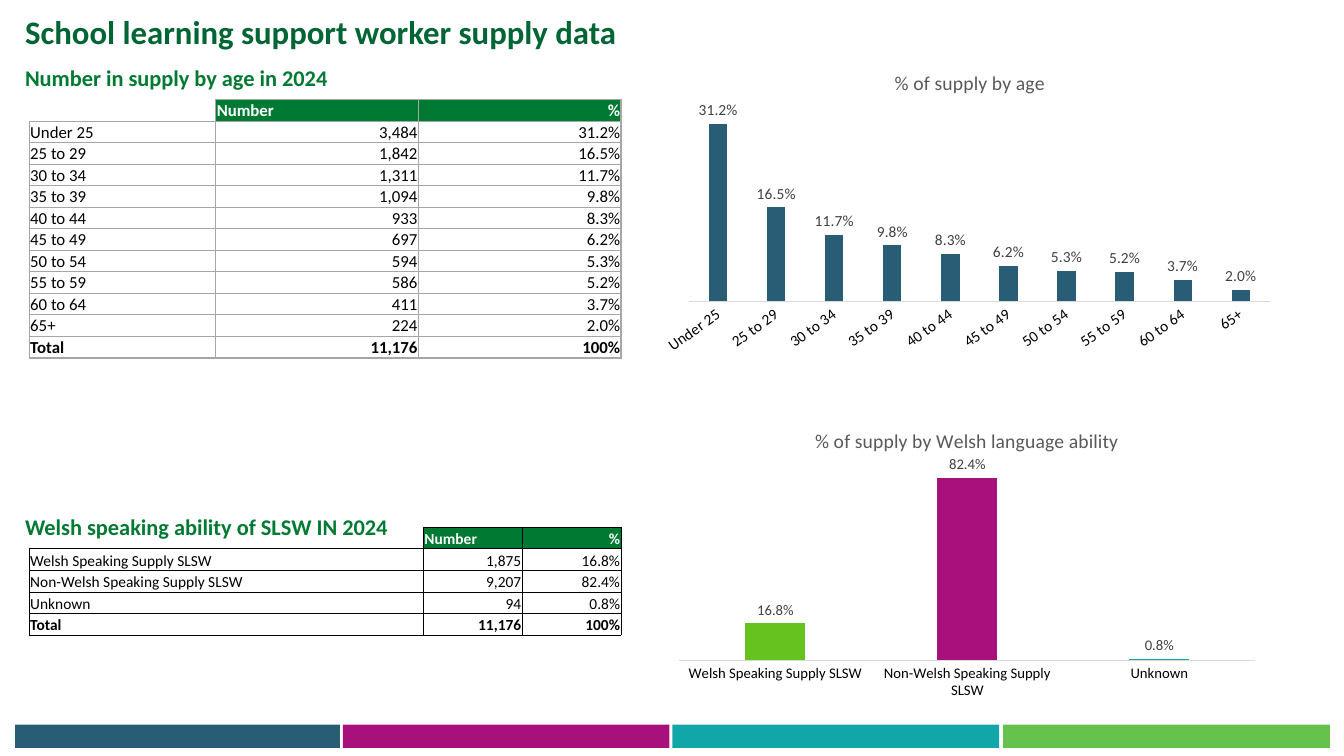
from lxml import etree
from pptx import Presentation
from pptx.chart.data import CategoryChartData
from pptx.dml.color import RGBColor
from pptx.enum import chart as ch, shapes, text
from pptx.oxml import parse_xml
from pptx.oxml.ns import nsdecls, qn
from pptx.util import Inches, Pt

FONT = "Calibri"
COLORS = {
    "title": "006534", "green": "007A33", "white": "FFFFFF", "black": "000000",
    "grey": "A6A6A6", "axis": "D9D9D9", "label": "404040", "heading": "595959",
    "navy": "295D75", "plum": "A8117C", "teal": "11A6A8", "leaf": "65C24C",
    "lime": "65C21F",
}
TITLE = "School learning support worker supply data"
HEADINGS = [
    ("Number in supply by age in 2024", (0.15, 0.59, 6.12, 0.37)),
    ("Welsh speaking ability of SLSW IN 2024", (0.15, 5.04, 3.92, 0.37)),
]
HEADER = ("", "Number", "%")
AGES = [
    ("Under 25", 3484, 31.2), ("25 to 29", 1842, 16.5), ("30 to 34", 1311, 11.7),
    ("35 to 39", 1094, 9.8), ("40 to 44", 933, 8.3), ("45 to 49", 697, 6.2),
    ("50 to 54", 594, 5.3), ("55 to 59", 586, 5.2), ("60 to 64", 411, 3.7),
    ("65+", 224, 2.0),
]
WELSH = [
    ("Welsh Speaking Supply SLSW", 1875, 16.8),
    ("Non-Welsh Speaking Supply SLSW", 9207, 82.4),
    ("Unknown", 94, 0.8),
]
TABLES = [
    dict(data=AGES, box=(0.29, 0.99, 5.87, 2.51), cols=(1.85, 2.01, 2.01),
         size=12, line="grey", width=1),
    dict(data=WELSH, box=(0.29, 5.23, 5.87, 1.07), cols=(3.91, 0.98, 0.98),
         size=11, line="black", width=0.5),
]
CHARTS = [
    dict(data=WELSH, title="% of supply by Welsh language ability",
         box=(6.62, 4.06, 5.95, 2.95), size=10.5, top=0.9,
         colors=("lime", "plum", "teal"), title_at=(0.24, 0.05),
         plot=(0.02, 0.175, 0.96, 0.67)),
    dict(data=AGES, title="% of supply by age",
         box=(6.46, 0.5, 6.26, 3.09), size=11, top=0.35,
         colors=("navy",), title_at=(0.38, 0.05),
         plot=(0.06, 0.167, 0.92, 0.638), angle=-36),
]
BARS = [("navy", 0.15, 3.22), ("plum", 3.4, 3.24), ("teal", 6.67, 3.24), ("leaf", 9.95, 3.24)]


def rgb(name):
    return RGBColor.from_string(COLORS[name])


def style(font, size, color, bold=False):
    font.name, font.size, font.bold = FONT, Pt(size), bold
    font.color.rgb = rgb(color)


def write(tf, words, size=12, color="black", bold=False, align=text.PP_ALIGN.LEFT):
    p = tf.paragraphs[0]
    p.alignment = align
    if words:
        r = p.add_run()
        r.text = words
        style(r.font, size, color, bold)
    else:
        etree.SubElement(p._p, qn("a:endParaRPr"), sz=str(size * 100))
    return p


def border(cell, color, width, hidden=()):
    tcPr = cell._tc.get_or_add_tcPr()
    for i, side in enumerate(("lnL", "lnR", "lnT", "lnB")):
        paint = ("<a:noFill/>" if side in hidden else
                 f'<a:solidFill><a:srgbClr val="{COLORS[color]}"/></a:solidFill>')
        tcPr.insert(i, parse_xml(
            f'<a:{side} {nsdecls("a")} w="{int(Pt(width))}">{paint}</a:{side}>'))


def add_table(s, data, box, cols, size, line, width):
    total = sum(n for _, n, _ in data)
    rows = [HEADER]
    rows += [(name, f"{n:,}", f"{pct:.1f}%") for name, n, pct in data]
    rows += [("Total", f"{total:,}", "100%")]
    tbl = s.shapes.add_table(len(rows), len(cols), *map(Inches, box)).table
    tbl.first_row = tbl.horz_banding = False
    for col, w in zip(tbl.columns, cols):
        col.width = Inches(w)
    for i, row in enumerate(rows):
        tbl.rows[i].height = Inches(box[3] / len(rows))
        for j, words in enumerate(row):
            cell = tbl.cell(i, j)
            cell.margin_left = cell.margin_right = cell.margin_top = Inches(0.01)
            cell.margin_bottom = 0
            cell.vertical_anchor = text.MSO_ANCHOR.BOTTOM
            head = i == 0 and j > 0
            if head:
                cell.fill.solid()
                cell.fill.fore_color.rgb = rgb("green")
            else:
                cell.fill.background()
            right = j == 2 or (j == 1 and i > 0)
            write(cell.text_frame, words, size, "white" if head else "black",
                  i in (0, len(rows) - 1),
                  text.PP_ALIGN.RIGHT if right else text.PP_ALIGN.LEFT)
            border(cell, line, width, () if words else ("lnL", "lnT"))


def place(parent, index, inner=False, **where):
    for old in parent.findall(qn("c:layout")):
        parent.remove(old)
    layout = etree.Element(qn("c:layout"))
    manual = etree.SubElement(layout, qn("c:manualLayout"))
    if inner:
        etree.SubElement(manual, qn("c:layoutTarget"), val="inner")
    for key in ("x", "y"):
        etree.SubElement(manual, qn(f"c:{key}Mode"), val="edge")
    for key, value in where.items():
        etree.SubElement(manual, qn(f"c:{key}"), val=str(value))
    parent.insert(index, layout)


def add_chart(s, data, title, box, size, top, colors, title_at, plot, angle=None):
    cd = CategoryChartData(number_format="0.0%")
    cd.categories = [name for name, _, _ in data]
    cd.add_series("Series 1", [round(pct / 100, 3) for _, _, pct in data])
    chart = s.shapes.add_chart(ch.XL_CHART_TYPE.COLUMN_CLUSTERED, *map(Inches, box), cd).chart
    style(chart.font, 10, "black")
    chart.has_legend = False
    write(chart.chart_title.text_frame, title, 14, "heading", align=text.PP_ALIGN.CENTER)
    chart.chart_title.include_in_layout = False
    place(chart.chart_title._element, 1, x=title_at[0], y=title_at[1])
    place(chart._chartSpace.chart.plotArea, 0, True, **dict(zip("xywh", plot)))

    cat, val = chart.category_axis, chart.value_axis
    cat.major_tick_mark = ch.XL_TICK_MARK.NONE
    cat.format.line.color.rgb = rgb("axis")
    cat.format.line.width = Pt(0.75)
    style(cat.tick_labels.font, size, "black")
    if angle:
        cat._element.find(qn("c:txPr")).find(qn("a:bodyPr")).set("rot", str(angle * 60000))
    val.minimum_scale, val.maximum_scale = 0, top
    val.has_major_gridlines = val.visible = False

    bars = chart.plots[0]
    bars.gap_width, bars.overlap, bars.vary_by_categories = 219, -27, False
    ser = bars.series[0]
    ser.format.fill.solid()
    ser.format.fill.fore_color.rgb = rgb(colors[0])
    for i, color in enumerate(colors[1:], 1):
        fill = ser.points[i].format.fill
        fill.solid()
        fill.fore_color.rgb = rgb(color)
    labels = ser.data_labels
    labels.show_value = True
    labels.number_format, labels.number_format_is_linked = "0.0%", False
    labels.position = ch.XL_LABEL_POSITION.OUTSIDE_END
    style(labels.font, size, "label")


def main():
    prs = Presentation()
    prs.slide_width, prs.slide_height = Inches(13.33), Inches(7.5)
    s = prs.slides.add_slide(prs.slide_layouts[5])
    for color, x, w in BARS:
        sp = s.shapes.add_shape(shapes.MSO_SHAPE.RECTANGLE, Inches(x), Inches(7.19),
                                Inches(w), Inches(0.23))
        sp.shadow.inherit = False
        sp.fill.solid()
        sp.fill.fore_color.rgb = rgb(color)
        sp.line.fill.background()
    sp = s.shapes.title
    sp.left, sp.top, sp.width, sp.height = map(Inches, (0.15, 0.11, 6.91, 0.48))
    sp.text_frame.vertical_anchor = text.MSO_ANCHOR.TOP
    sp.text_frame.auto_size = text.MSO_AUTO_SIZE.NONE
    write(sp.text_frame, TITLE, 23.4, "title", True).line_spacing = 0.9
    for table in TABLES:
        add_table(s, **table)
    for words, box in HEADINGS:
        tf = s.shapes.add_textbox(*map(Inches, box)).text_frame
        tf.word_wrap = True
        write(tf, words, 16, "green", True)
    for chart in CHARTS:
        add_chart(s, **chart)
    prs.save("out.pptx")


if __name__ == "__main__":
    main()
